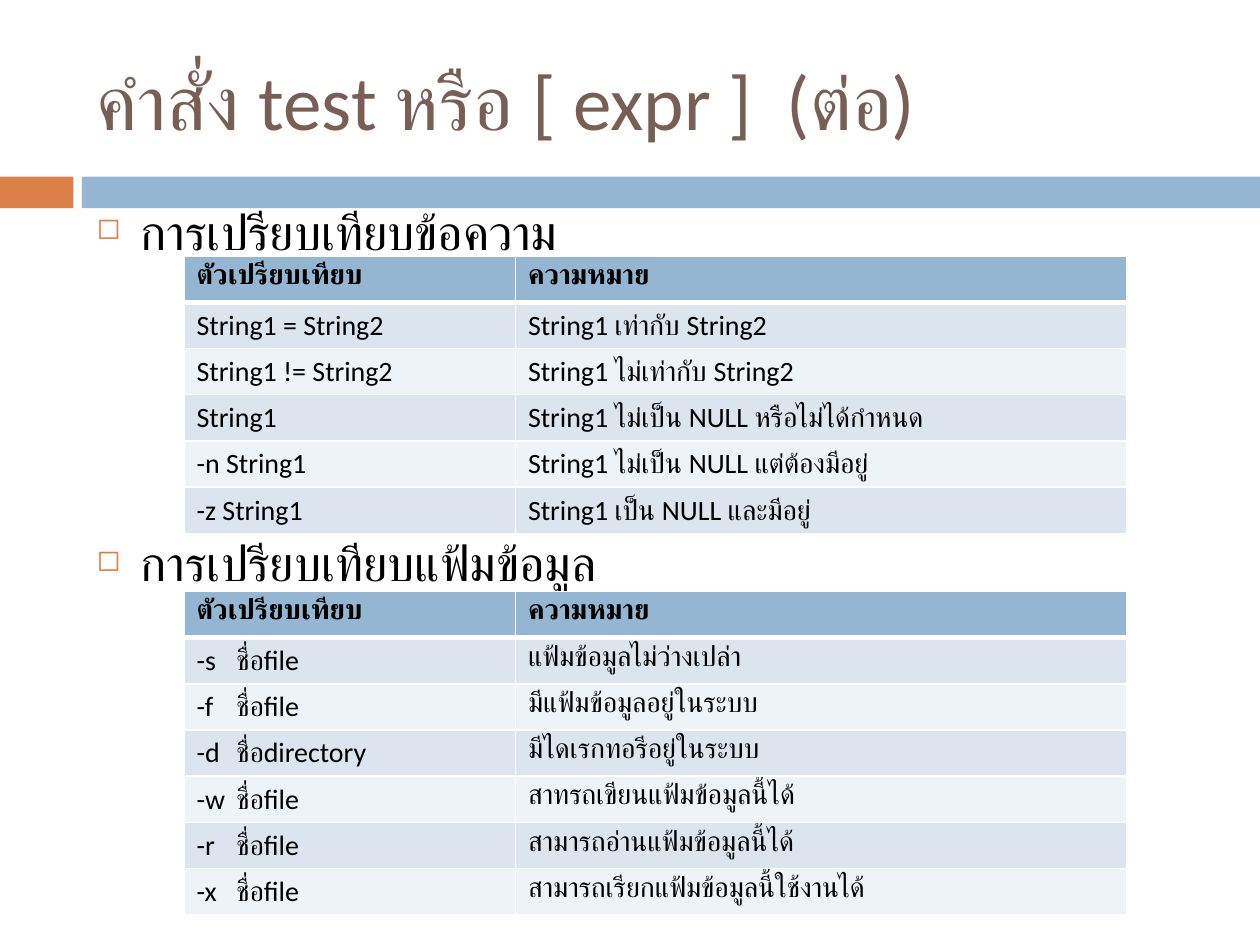
from lxml.etree import SubElement
from pptx import Presentation
from pptx.dml.color import RGBColor
from pptx.enum.shapes import MSO_SHAPE as Shape
from pptx.enum.text import MSO_ANCHOR as Anchor
from pptx.oxml.ns import qn
from pptx.util import Cm, Pt

COLORS = {
    "title": "775F55", "text": "000000", "accent": "DD8047", "header": "94B6D2",
    "band_dark": "DCE5EE", "band_light": "EEF3F7", "border": "FFFFFF",
}
TABLE_HEADER = ("ตัวเปรียบเทียบ", "ความหมาย")
STRING_TESTS = [
    ("String1 = String2", "String1 เท่ากับ String2"),
    ("String1 != String2", "String1 ไม่เท่ากับ String2"),
    ("String1", "String1 ไม่เป็น NULL หรือไม่ได้กำหนด"),
    ("-n String1", "String1 ไม่เป็น NULL แต่ต้องมีอยู่"),
    ("-z String1", "String1 เป็น NULL และมีอยู่"),
]
FILE_TESTS = [
    ("-s\tชื่อfile", "แฟ้มข้อมูลไม่ว่างเปล่า"),
    ("-f\tชื่อfile", "มีแฟ้มข้อมูลอยู่ในระบบ"),
    ("-d\tชื่อdirectory", "มีไดเรกทอรีอยู่ในระบบ"),
    ("-w\tชื่อfile", "สาทรถเขียนแฟ้มข้อมูลนี้ได้"),
    ("-r\tชื่อfile", "สามารถอ่านแฟ้มข้อมูลนี้ได้"),
    ("-x\tชื่อfile", "สามารถเรียกแฟ้มข้อมูลนี้ใช้งานได้"),
]


class SlideBuilder:
    font = "Calibri"
    text_left, text_width = 1.7, 22.66
    table_left, column_widths, row_height = 3.71, (6.68, 12.32), 0.89

    def __init__(self, slide):
        self.slide = slide

    def rgb(self, name):
        return RGBColor.from_string(COLORS[name])

    def add_run(self, paragraph, text, size, color="text", bold=False):
        run = paragraph.add_run()
        run.text = text
        run.font.name = self.font
        run.font.size = Pt(size)
        run.font.bold = bold
        run.font.color.rgb = self.rgb(color)

    def bar(self, left, width, color):
        bar = self.slide.shapes.add_shape(
            Shape.RECTANGLE, Cm(left), Cm(3.56), Cm(width), Cm(0.64))
        bar.shadow.inherit = False
        bar.fill.solid()
        bar.fill.fore_color.rgb = self.rgb(color)
        bar.line.fill.background()

    def text_box(self, top, height, anchor):
        frame = self.slide.shapes.add_textbox(
            Cm(self.text_left), Cm(top), Cm(self.text_width), Cm(height)).text_frame
        frame.word_wrap = True
        frame.vertical_anchor = anchor
        return frame.paragraphs[0]

    def title(self, text):
        self.add_run(self.text_box(0.64, 2.74, Anchor.MIDDLE), text, 44, "title")

    def heading(self, text, top):
        paragraph = self.text_box(top, 1.5, Anchor.TOP)
        paragraph.space_before = Pt(7)
        props = paragraph._p.get_or_add_pPr()
        props.set("marL", str(Cm(0.89)))
        props.set("indent", str(-Cm(0.89)))
        bullet_color = SubElement(props, qn("a:buClr"))
        SubElement(bullet_color, qn("a:srgbClr"), val=COLORS["accent"])
        SubElement(props, qn("a:buSzPct"), val="60000")
        SubElement(props, qn("a:buChar"), char="◻")
        self.add_run(paragraph, text, 28)

    def border(self, cell, side, width):
        line = SubElement(cell._tc.get_or_add_tcPr(), qn(f"a:ln{side}"), w=str(Pt(width)))
        fill = SubElement(line, qn("a:solidFill"))
        SubElement(fill, qn("a:srgbClr"), val=COLORS["border"])

    def cell(self, cell, text, row):
        # Borders precede the fill in the cell properties.
        for side in "LRTB":
            beside_header = (row, side) in ((0, "B"), (1, "T"))
            self.border(cell, side, 3 if beside_header else 1)
        band = "header" if row == 0 else ("band_light", "band_dark")[row % 2]
        cell.fill.solid()
        cell.fill.fore_color.rgb = self.rgb(band)
        paragraph = cell.text_frame.paragraphs[0]
        if "\t" in text:
            tabs = SubElement(paragraph._p.get_or_add_pPr(), qn("a:tabLst"))
            SubElement(tabs, qn("a:tab"), pos=str(Cm(0.8)), algn="l")
        self.add_run(paragraph, text, 16, bold=row == 0)

    def table(self, tests, top):
        rows = [TABLE_HEADER, *tests]
        table = self.slide.shapes.add_table(
            len(rows), len(TABLE_HEADER), Cm(self.table_left), Cm(top),
            Cm(sum(self.column_widths)), Cm(self.row_height * len(rows))).table
        for column, width in zip(table.columns, self.column_widths):
            column.width = Cm(width)
        for r, texts in enumerate(rows):
            for c, text in enumerate(texts):
                self.cell(table.cell(r, c), text, r)


def main():
    deck = Presentation()
    deck.slide_width, deck.slide_height = Cm(25.4), Cm(19.05)
    builder = SlideBuilder(deck.slides.add_slide(deck.slide_layouts[6]))
    builder.bar(0, 1.48, "accent")
    builder.bar(1.65, 23.75, "header")
    builder.title("คำสั่ง test หรือ [ expr ]  (ต่อ)")
    builder.heading("การเปรียบเทียบข้อความ", 3.94)
    builder.heading("การเปรียบเทียบแฟ้มข้อมูล", 10.62)
    builder.table(STRING_TESTS, 5.16)
    builder.table(FILE_TESTS, 11.92)
    deck.save("out.pptx")


if __name__ == "__main__":
    main()
